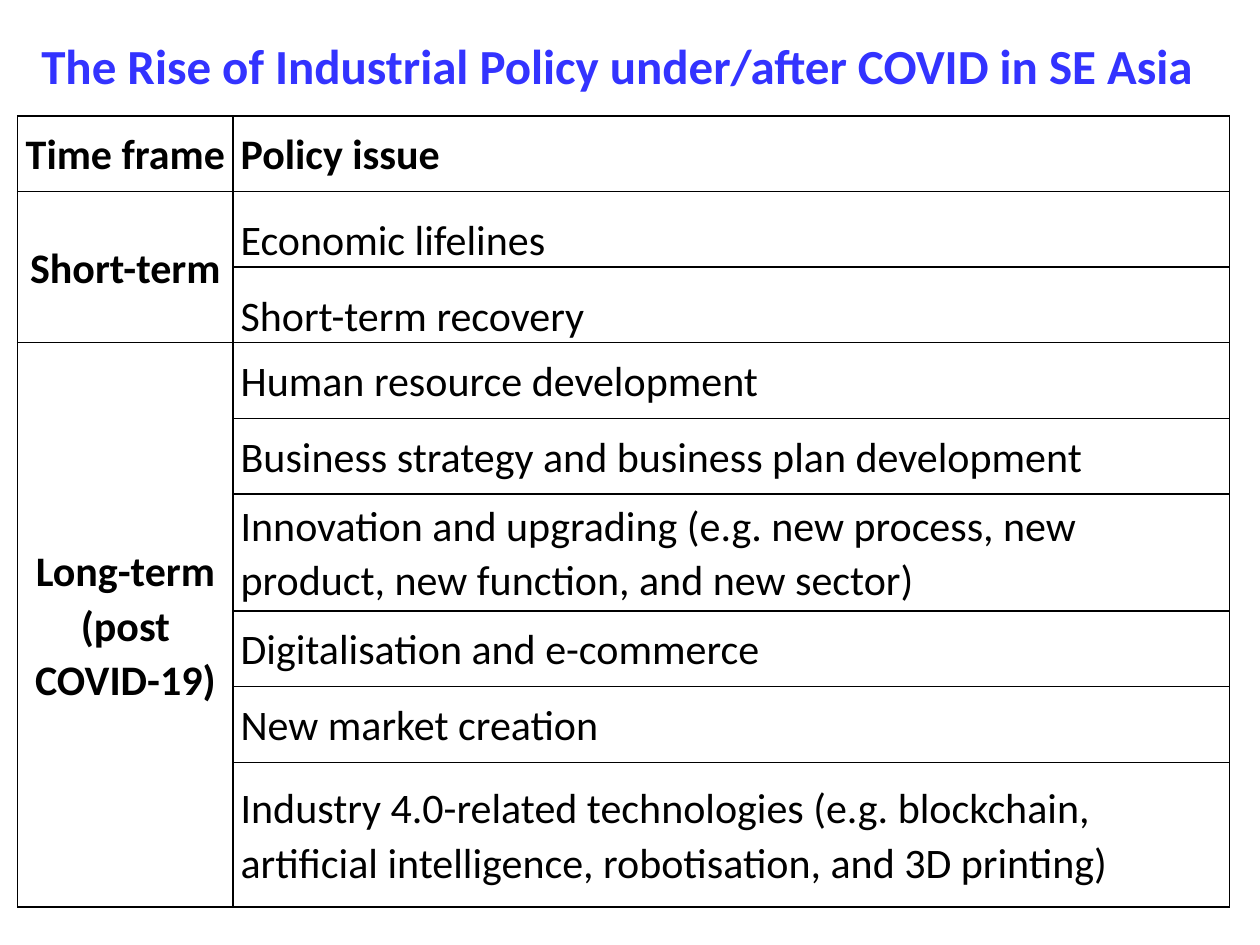
from lxml import etree
from pptx import Presentation
from pptx.dml.color import RGBColor
from pptx.enum.text import MSO_ANCHOR, PP_ALIGN
from pptx.oxml.ns import qn
from pptx.util import Inches, Pt

MIDDLE, BOTTOM = MSO_ANCHOR.MIDDLE, MSO_ANCHOR.BOTTOM
LEFT, CENTER = PP_ALIGN.LEFT, PP_ALIGN.CENTER
COLORS = {"title": "3333FF", "text": "000000", "border": "000000"}
FONT = "Calibri"

TITLE = "The Rise of Industrial Policy under/after COVID in SE Asia"
# time frame, anchor of its issues, [(policy issue, row height)]
ROW = 0.6
GROUPS = [
    ("Time frame", MIDDLE, [("Policy issue", ROW)]),
    ("Short-term", BOTTOM, [("Economic lifelines", ROW), ("Short-term recovery", ROW)]),
    ("Long-term\n(post COVID-19)", MIDDLE, [
        ("Human resource development", ROW),
        ("Business strategy and business plan development", ROW),
        ("Innovation and upgrading (e.g. new process, new product, "
         "new function, and new sector)", 0.93),
        ("Digitalisation and e-commerce", ROW),
        ("New market creation", ROW),
        ("Industry 4.0-related technologies (e.g. blockchain, "
         "artificial intelligence, robotisation, and 3D printing)", 1.15),
    ]),
]
COL_WIDTHS = [1.71, 7.91]


def format_paragraph(p, text, size, color, bold, align, spacing):
    p.text = text
    p.alignment, p.line_spacing = align, spacing
    p.font.name, p.font.size, p.font.bold = FONT, Pt(size), bold
    p.font.color.rgb = RGBColor.from_string(COLORS[color])


def style_cell(cell):
    """Clear the fill, set the margins and draw all four borders."""
    cell.margin_left = cell.margin_right = Inches(0.06)
    cell.margin_top = cell.margin_bottom = 0
    tc_pr = cell._tc.get_or_add_tcPr()
    for side in ("a:lnL", "a:lnR", "a:lnT", "a:lnB"):
        ln = etree.SubElement(tc_pr, qn(side), w=str(Pt(1)))
        fill = etree.SubElement(ln, qn("a:solidFill"))
        etree.SubElement(fill, qn("a:srgbClr"), val=COLORS["border"])
    cell.fill.background()


def write_cell(cell, text, bold, align, anchor):
    cell.vertical_anchor = anchor
    format_paragraph(cell.text_frame.paragraphs[0], text, 24, "text", bold, align, 1.07)


def add_title(s):
    title = s.shapes.title
    title.left, title.top = Inches(0.14), 0
    title.width, title.height = Inches(9.51), Inches(1.09)
    tf = title.text_frame
    tf.word_wrap, tf.vertical_anchor = True, MIDDLE
    format_paragraph(tf.paragraphs[0], TITLE, 28, "title", True, CENTER, 0.9)


def add_policy_table(s):
    heights = [h for _, _, issues in GROUPS for _, h in issues]
    table = s.shapes.add_table(len(heights), len(COL_WIDTHS), Inches(0.14), Inches(0.92),
                               Inches(sum(COL_WIDTHS)), Inches(sum(heights))).table
    table.first_row = table.horz_banding = False
    for col, width in zip(table.columns, COL_WIDTHS):
        col.width = Inches(width)
    for row, height in zip(table.rows, heights):
        row.height = Inches(height)
    for cell in table.iter_cells():
        style_cell(cell)

    first = 0
    for frame, anchor, issues in GROUPS:
        last = first + len(issues) - 1
        if last > first:
            table.cell(first, 0).merge(table.cell(last, 0))
        write_cell(table.cell(first, 0), frame, True, CENTER, MIDDLE)
        for r, (issue, _) in enumerate(issues, first):
            write_cell(table.cell(r, 1), issue, r == 0, LEFT, anchor)
        first = last + 1


def main():
    prs = Presentation()
    prs.slide_width, prs.slide_height = Inches(10), Inches(7.5)
    s = prs.slides.add_slide(prs.slide_layouts[5])
    add_title(s)
    add_policy_table(s)
    prs.save("out.pptx")


if __name__ == "__main__":
    main()
